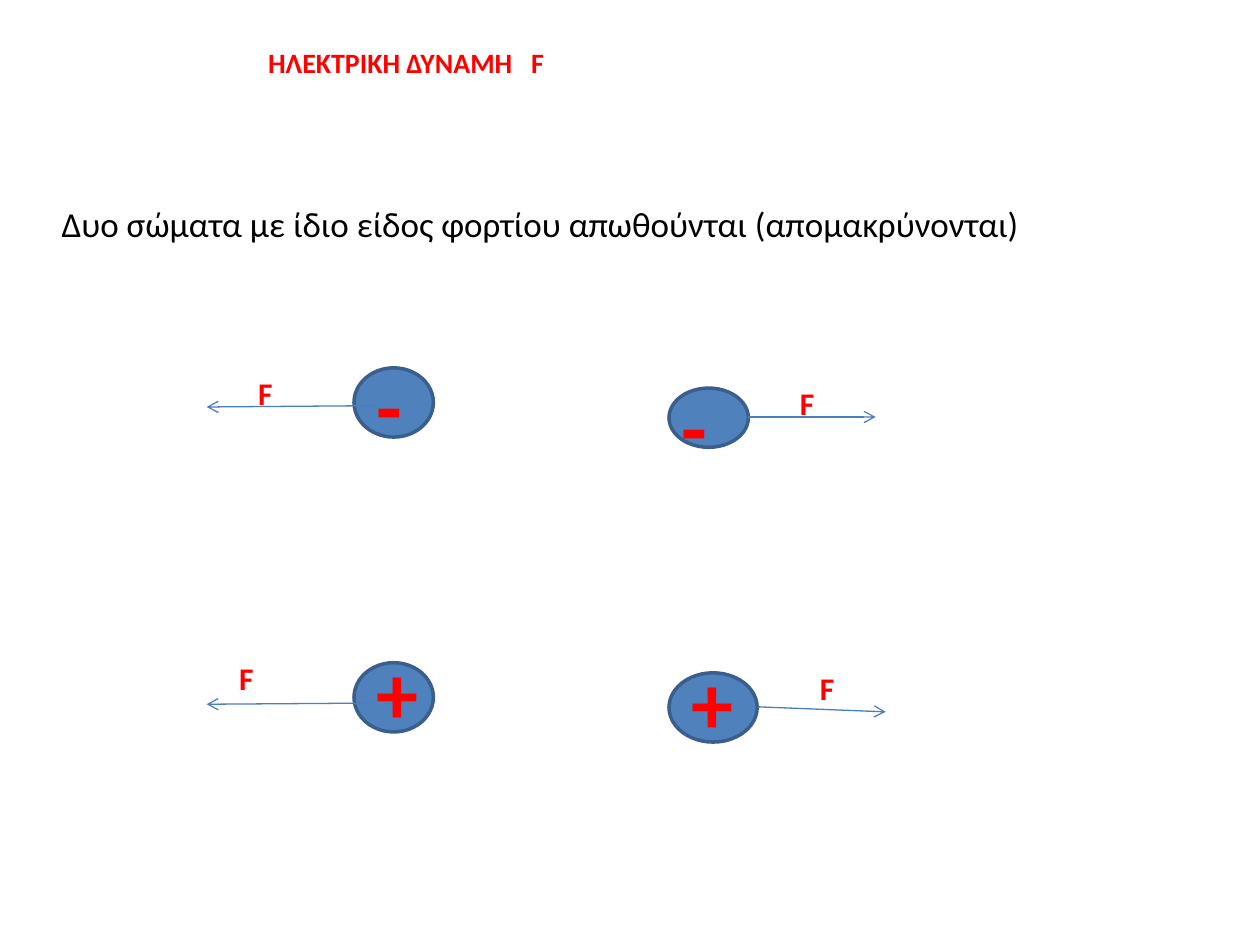
"""Build a slide on the electric force between two bodies with like charges."""
import pptx
import pptx.dml.color
import pptx.enum.shapes
import pptx.enum.text
import pptx.oxml
import pptx.oxml.ns
import pptx.util

COLORS = {"red": "FF0000", "black": "000000", "body": "4F81BD",
          "outline": "3A5F8C", "arrow": "4B7EBC"}
SLIDE_W, SLIDE_H = 10, 7.5
FONT = "Calibri"
SIGN_SIZE, LABEL_SIZE = (4.7, 12.13), (4.7, 5.33)

# Places are percentages of the slide's width and height.
TEXTS = [
    ("ΗΛΕΚΤΡΙΚΗ ΔΥΝΑΜΗ   F", (20.3, 4.13, 65.6, 4.93), 16, "red", True),
    ("Δυο σώματα με ίδιο είδος φορτίου απωθούνται (απομακρύνονται)",
     (3.9, 20.8, 85.2, 5.87), 20, "black", False),
]
CHARGES = [
    {"sign": "-", "body": (28.1, 38.93, 6.3, 7.33), "sign_at": (28.9, 36.8),
     "arrow": (29.7, 42.93, 16.4, 43.07), "label_at": (19.5, 38.93)},
    {"sign": "-", "body": (53.1, 41.07, 6.3, 6.27), "sign_at": (53.1, 38.93),
     "arrow": (59.4, 44.13, 69.5, 44.13), "label_at": (62.5, 40)},
    {"sign": "+", "body": (28.1, 70.13, 6.3, 7.33), "sign_at": (28.9, 67.07),
     "arrow": (29.7, 74.4, 16.4, 74.53), "label_at": (18, 69.07)},
    {"sign": "+", "body": (53.1, 71.2, 7, 7.33), "sign_at": (53.9, 68.13),
     "arrow": (60.2, 74.8, 70.3, 75.33), "label_at": (64.1, 70.13)},
]


def place(box):
    return [pptx.util.Inches(v / 100 * side)
            for v, side in zip(box, (SLIDE_W, SLIDE_H) * 2)]


def rgb(name):
    return pptx.dml.color.RGBColor.from_string(COLORS[name])


def add_text(s, text, box, size, color="red", bold=True):
    tf = s.shapes.add_textbox(*place(box)).text_frame
    tf.word_wrap = True
    tf.auto_size = pptx.enum.text.MSO_AUTO_SIZE.SHAPE_TO_FIT_TEXT
    p = tf.paragraphs[0]
    p.text = text
    p.font.name, p.font.size, p.font.bold = FONT, pptx.util.Pt(size), bold
    p.font.color.rgb = rgb(color)


def add_body(s, box):
    sp = s.shapes.add_shape(pptx.enum.shapes.MSO_SHAPE.OVAL, *place(box))
    sp.shadow.inherit = False
    sp.fill.solid()
    sp.fill.fore_color.rgb = rgb("body")
    sp.line.color.rgb = rgb("outline")
    sp.line.width = pptx.util.Pt(2)


def add_arrow(s, ends):
    sp = s.shapes.add_connector(pptx.enum.shapes.MSO_CONNECTOR.STRAIGHT, *place(ends))
    sp.line.color.rgb = rgb("arrow")
    sp.line.width = pptx.util.Pt(0.75)
    tail = pptx.oxml.parse_xml(
        f'<a:tailEnd {pptx.oxml.ns.nsdecls("a")} type="arrow"/>')
    sp.line._get_or_add_ln().append(tail)
    sp._element.spPr.append(
        pptx.oxml.parse_xml(f'<a:effectLst {pptx.oxml.ns.nsdecls("a")}/>'))


def main():
    prs = pptx.Presentation()
    prs.slide_width = pptx.util.Inches(SLIDE_W)
    prs.slide_height = pptx.util.Inches(SLIDE_H)
    s = prs.slides.add_slide(prs.slide_layouts[6])
    for text in TEXTS:
        add_text(s, *text)
    for charge in CHARGES:
        add_body(s, charge["body"])
        add_arrow(s, charge["arrow"])
        add_text(s, charge["sign"], charge["sign_at"] + SIGN_SIZE, 48)
        add_text(s, "F", charge["label_at"] + LABEL_SIZE, 18)
    prs.save("out.pptx")


if __name__ == "__main__":
    main()
